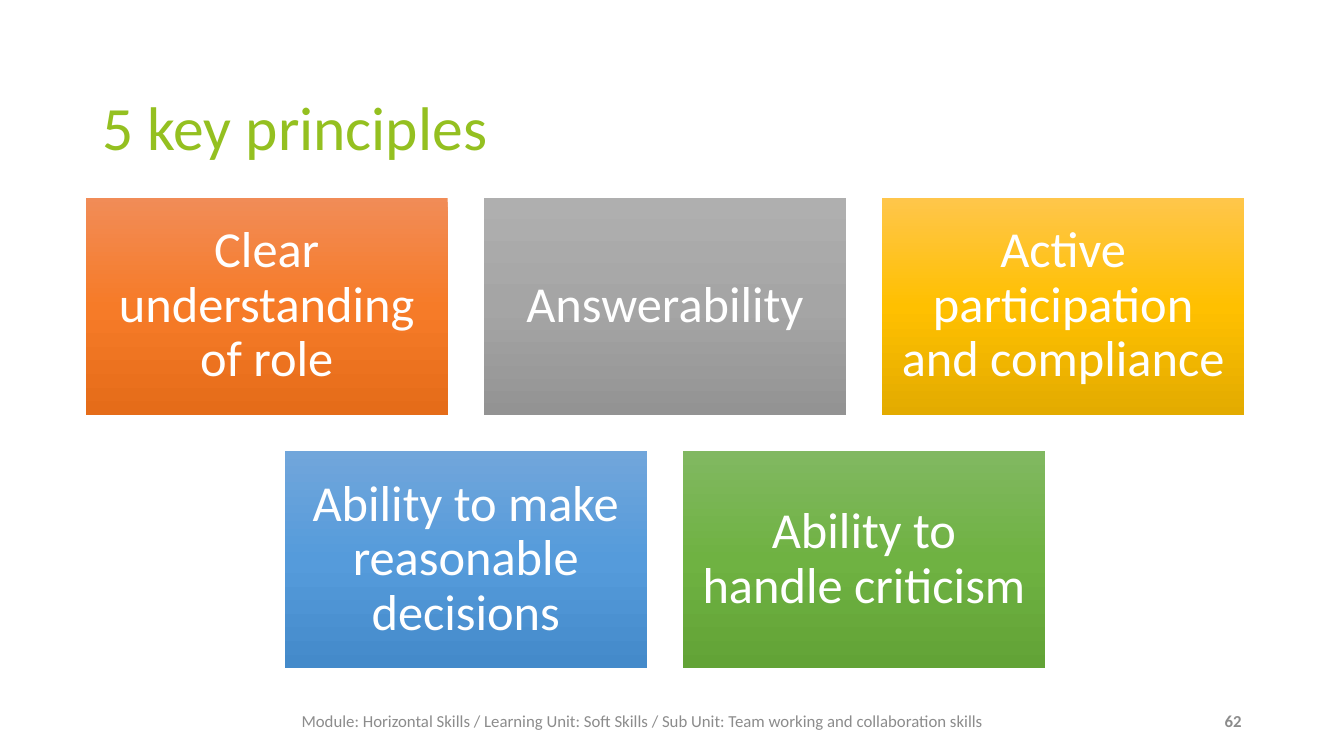
from copy import deepcopy

from pptx import Presentation
from pptx.dml.color import RGBColor
from pptx.enum.shapes import MSO_SHAPE
from pptx.enum.text import MSO_ANCHOR, MSO_AUTO_SIZE, PP_ALIGN
from pptx.oxml.ns import qn
from pptx.util import Pt

LEFT, CENTER, RIGHT = PP_ALIGN.LEFT, PP_ALIGN.CENTER, PP_ALIGN.RIGHT
MIDDLE = MSO_ANCHOR.MIDDLE
NO_AUTO_SIZE = MSO_AUTO_SIZE.NONE
RECTANGLE = MSO_SHAPE.RECTANGLE
TITLE_ONLY_LAYOUT = 5

FONT = "Calibri"
COLORS = {
    "title": "94C020",
    "footer": "8C8C8C",
    "card_text": "FFFFFF",
    "orange": ("F18C57", "F67B28", "E56C19"),
    "gray": ("AFAFAF", "A5A5A5", "939393"),
    "yellow": ("FFC64B", "FFC000", "E3AB00"),
    "blue": ("71A6DB", "559BDB", "448ACA"),
    "green": ("81B861", "6FB242", "62A336"),
}
PRINCIPLE_ROWS = [
    [
        ("Clear understanding of role", "orange"),
        ("Answerability", "gray"),
        ("Active participation and compliance", "yellow"),
    ],
    [
        ("Ability to make reasonable decisions", "blue"),
        ("Ability to handle criticism", "green"),
    ],
]
FOOTER = (
    "Module: Horizontal Skills / Learning Unit: Soft Skills / "
    "Sub Unit: Team working and collaboration skills"
)


def write_text(shape, text, size, color, align=LEFT, bold=False, spacing=1.0, inset=None):
    frame = shape.text_frame
    frame.word_wrap = True
    frame.auto_size = NO_AUTO_SIZE
    frame.vertical_anchor = MIDDLE
    if inset is not None:
        frame.margin_left = frame.margin_right = Pt(inset)
        frame.margin_top = frame.margin_bottom = Pt(inset)
    paragraph = frame.paragraphs[0]
    paragraph.alignment = align
    paragraph.line_spacing = spacing
    run = paragraph.add_run()
    run.text = text
    run.font.name = FONT
    run.font.size = Pt(size)
    run.font.bold = bold
    run.font.color.rgb = RGBColor.from_string(COLORS[color])


def fill_with_gradient(shape, colors):
    shape.fill.gradient()
    shape.fill.gradient_angle = 270
    stop_list = shape.element.spPr.find(qn("a:gradFill")).find(qn("a:gsLst"))
    stop_list.append(deepcopy(stop_list[0]))
    for index, (stop, color) in enumerate(zip(shape.fill.gradient_stops, colors)):
        stop.position = index / 2
        stop.color.rgb = RGBColor.from_string(color)


def add_title(slide, left, top, width, height):
    title = slide.shapes.title
    title.left, title.top = Pt(left), Pt(top)
    title.width, title.height = Pt(width), Pt(height)
    write_text(title, "5 key principles", 44, "title", spacing=0.9)


def add_card(slide, text, color, left, top, width, height):
    card = slide.shapes.add_shape(RECTANGLE, Pt(left), Pt(top), Pt(width), Pt(height))
    card.shadow.inherit = False
    card.line.fill.background()
    fill_with_gradient(card, COLORS[color])
    write_text(card, text, 36, "card_text", align=CENTER, spacing=0.9, inset=10.8)


def add_principles(slide, left, top, width):
    card_width = width / 3.2
    card_height = card_width * 0.6
    gap = card_width * 0.1
    for row, cards in enumerate(PRINCIPLE_ROWS):
        row_width = len(cards) * (card_width + gap) - gap
        row_left = left + (width - row_width) / 2
        row_top = top + row * (card_height + gap)
        for column, (text, color) in enumerate(cards):
            card_left = row_left + column * (card_width + gap)
            add_card(slide, text, color, card_left, row_top, card_width, card_height)


def add_footer(slide, left, top, width, height):
    number_width, number_height = 36, 28.8
    footer = slide.shapes.add_textbox(Pt(left), Pt(top), Pt(width - 42), Pt(height))
    write_text(footer, FOOTER, 12, "footer", align=CENTER)
    number = slide.shapes.add_textbox(
        Pt(left + width - number_width),
        Pt(top + (height - number_height) / 2),
        Pt(number_width),
        Pt(number_height),
    )
    write_text(number, "62", 12, "footer", align=RIGHT, bold=True)


def main():
    presentation = Presentation()
    presentation.slide_width, presentation.slide_height = Pt(960), Pt(540)
    slide = presentation.slides.add_slide(presentation.slide_layouts[TITLE_ONLY_LAYOUT])
    add_title(slide, 66, 53.5, 828, 79)
    add_principles(slide, 61.2, 141.1, 827.5)
    add_footer(slide, 66, 491, 828, 47.5)
    presentation.save("out.pptx")


if __name__ == "__main__":
    main()
